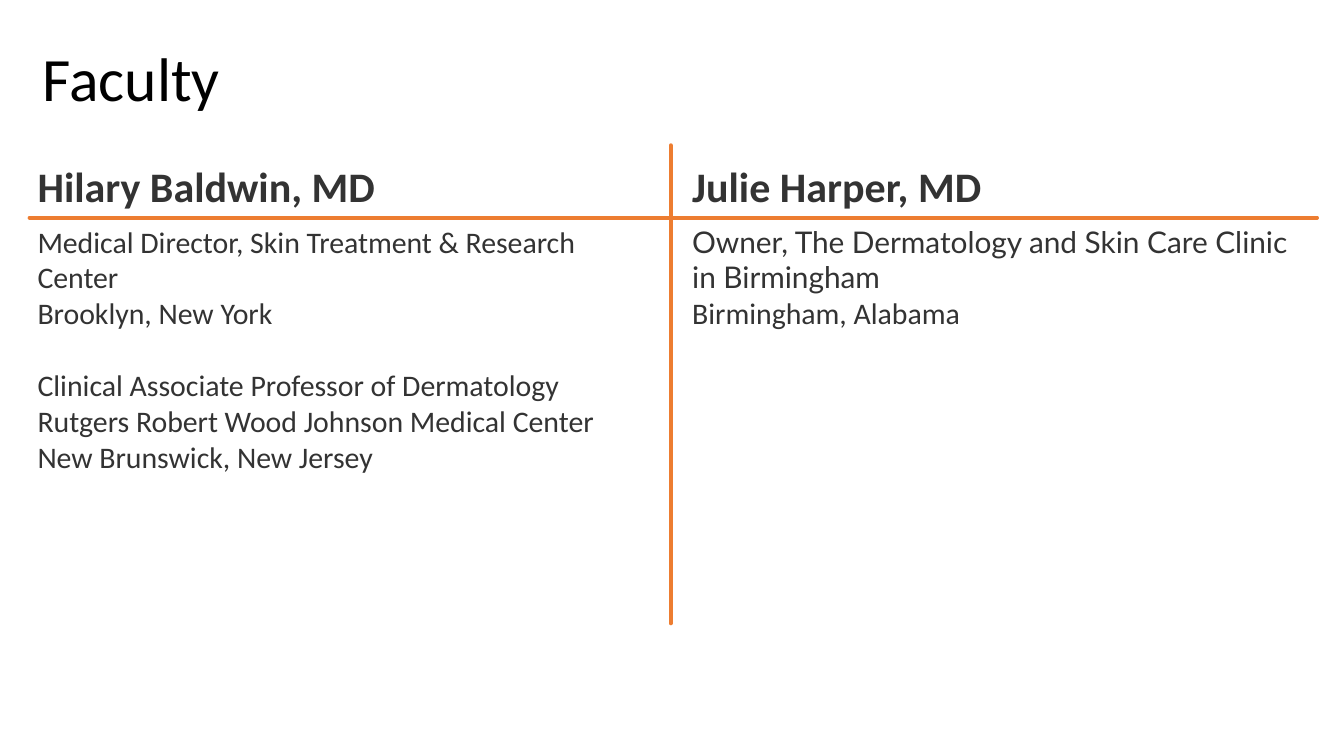
import pptx
import pptx.dml.color
import pptx.enum.shapes
import pptx.enum.text
import pptx.oxml.ns
import pptx.util
from lxml import etree

Pt = pptx.util.Pt
ANCHOR = pptx.enum.text.MSO_ANCHOR
COLORS = {"title": "000000", "body": "333333", "rule": "ED7D31"}

# Shared layout, in points
COL_W, HEAD_TOP, RULE_Y, BODY_H = 339, 79.2, 116.6, 217.4

FACULTY = [
    (15.1, "Hilary Baldwin, MD", [
        ("Medical Director, Skin Treatment & Research Center", "Calibri", 0),
        ("Brooklyn, New York", "Calibri", 0),
        ("Clinical Associate Professor of Dermatology\n"
         "Rutgers Robert Wood Johnson Medical Center\n"
         "New Brunswick, New Jersey", "Calibri", 19.2),
    ]),
    (365.8, "Julie Harper, MD", [
        ("Owner, The Dermatology and Skin Care Clinic in Birmingham", "Lato", 0),
        ("Birmingham, Alabama", "Calibri", 0),
    ]),
]


def rgb(name):
    return pptx.dml.color.RGBColor.from_string(COLORS[name])


def add_box(s, x, y, w, h, anchor, inset=(5, 3)):
    tf = s.shapes.add_textbox(Pt(x), Pt(y), Pt(w), Pt(h)).text_frame
    tf.word_wrap = True
    tf.vertical_anchor = anchor
    tf.margin_left = tf.margin_right = Pt(inset[0])
    tf.margin_top = tf.margin_bottom = Pt(inset[1])
    return tf


def add_text(p, text, size, color, font="Calibri", bold=False):
    for i, line in enumerate(text.split("\n")):
        if i:
            p.add_line_break()
        r = p.add_run()
        r.text = line
        r.font.name = font
        r.font.size = Pt(size)
        r.font.bold = bold
        r.font.color.rgb = rgb(color)


def add_heading(s, text, box, size, color, anchor, bold=False, inset=(5, 3)):
    p = add_box(s, *box, anchor, inset).paragraphs[0]
    p.line_spacing = 0.9
    add_text(p, text, size, color, bold=bold)


def add_details(s, x, entries):
    tf = add_box(s, x, RULE_Y, COL_W, BODY_H, ANCHOR.TOP)
    for i, (text, font, gap) in enumerate(entries):
        p = tf.add_paragraph() if i else tf.paragraphs[0]
        if gap:
            p.space_before = Pt(gap)
        add_text(p, text, 16, "body", font)


def add_rule(s, x1, y1, x2, y2):
    sp = s.shapes.add_connector(pptx.enum.shapes.MSO_CONNECTOR.STRAIGHT,
                                Pt(x1), Pt(y1), Pt(x2), Pt(y2))
    sp.line.color.rgb = rgb("rule")
    sp.line.width = Pt(2)
    # Round line ends, no shadow
    props = sp._element.spPr
    props.find(pptx.oxml.ns.qn("a:ln")).set("cap", "rnd")
    etree.SubElement(props, pptx.oxml.ns.qn("a:effectLst"))


def main():
    prs = pptx.Presentation()
    prs.slide_width, prs.slide_height = Pt(720), Pt(405)
    s = prs.slides.add_slide(prs.slide_layouts[6])

    # Title
    add_heading(s, "Faculty", (15.8, 10.1, 690, 67.7), 33, "title",
                ANCHOR.MIDDLE, inset=(7.2, 3.6))

    # One column per faculty member
    for x, name, entries in FACULTY:
        add_heading(s, name, (x, HEAD_TOP, COL_W, RULE_Y - HEAD_TOP), 22.5,
                    "body", ANCHOR.BOTTOM, bold=True)
        add_details(s, x, entries)

    # Dividing lines
    add_rule(s, 15.8, RULE_Y, 705.6, RULE_Y)
    add_rule(s, 359.3, RULE_Y + BODY_H, 359.3, 77.8)

    prs.save("out.pptx")


if __name__ == "__main__":
    main()
